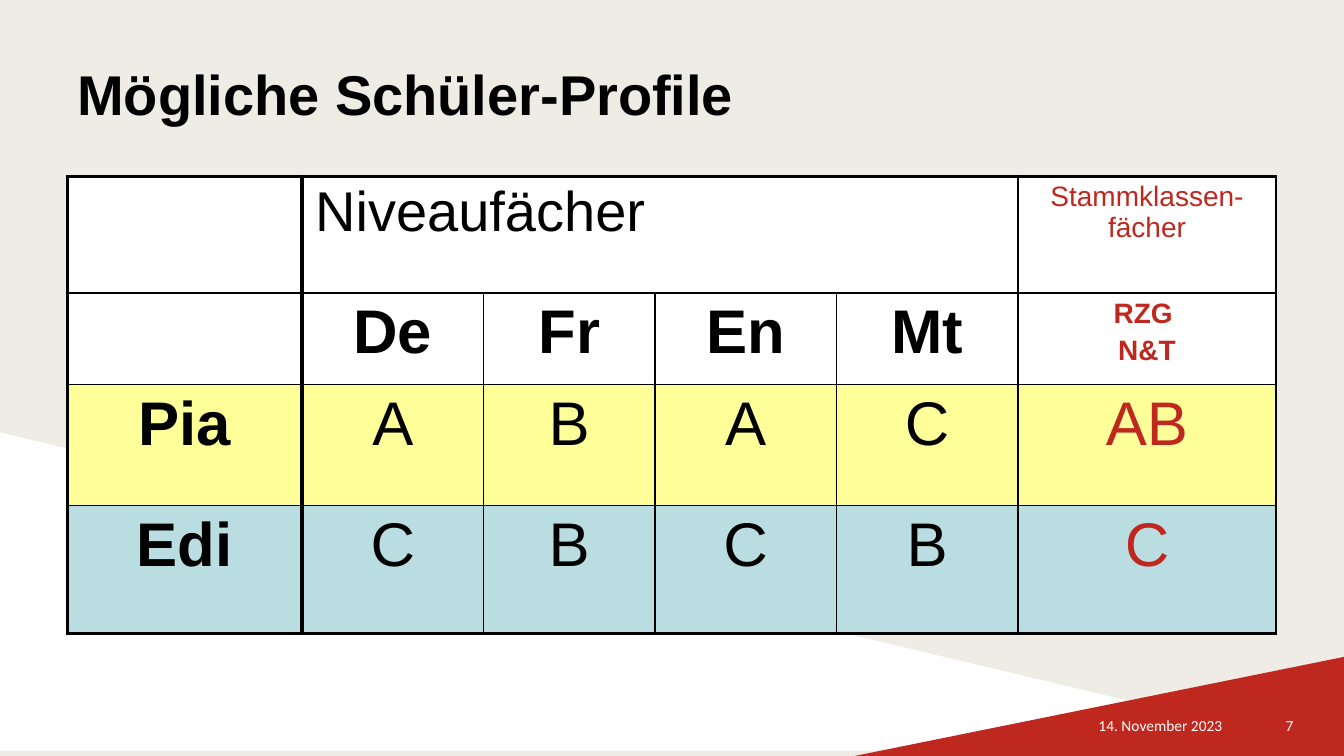
from pptx import Presentation
from pptx.dml.color import RGBColor
from pptx.enum.shapes import MSO_SHAPE
from pptx.enum.text import MSO_ANCHOR, PP_ALIGN
from pptx.oxml.ns import qn
from pptx.util import Inches, Pt
from lxml import etree

TRIANGLE = MSO_SHAPE.RIGHT_TRIANGLE
MIDDLE = MSO_ANCHOR.MIDDLE
LEFT, CENTER, RIGHT = PP_ALIGN.LEFT, PP_ALIGN.CENTER, PP_ALIGN.RIGHT

THEME = {
    "background": "EFEBE5", "white": "FFFFFF", "red": "BE281E",
    "black": "000000", "yellow": "FFFF99", "blue": "BADDE1",
    "font": "Arial", "footer font": "Calibri",
    "title": 40, "grade": 44, "note": 20, "footer": 11,
}

presentation = Presentation()
presentation.slide_width = Inches(13.33)
presentation.slide_height = Inches(7.5)
slide = presentation.slides.add_slide(presentation.slide_layouts[5])
slide.background.fill.solid()
slide.background.fill.fore_color.rgb = RGBColor.from_string(THEME["background"])


def place(left, top, width, height):
    """Turn shares of the slide's size into lengths."""
    across, down = presentation.slide_width, presentation.slide_height
    return [int(left * across), int(top * down), int(width * across), int(height * down)]


def write(paragraph, text, size, color, bold=False, align=CENTER, font=THEME["font"]):
    paragraph.alignment = align
    run = paragraph.add_run()
    run.text = text
    run.font.name = font
    run.font.size = Pt(THEME[size])
    run.font.bold = bold
    run.font.color.rgb = RGBColor.from_string(THEME[color])


# Background wedges
for area, color, flipped in [
    ((0, 0.572, 0.996, 0.421), "white", False),
    ((0.636, 0.869, 0.364, 0.131), "red", True),
]:
    wedge = slide.shapes.add_shape(TRIANGLE, *place(*area))
    wedge.shadow.inherit = False
    wedge.fill.solid()
    wedge.fill.fore_color.rgb = RGBColor.from_string(THEME[color])
    wedge.line.fill.background()
    if flipped:
        wedge.element.spPr.find(qn("a:xfrm")).set("flipH", "1")

# Date and slide number
for text, left, width, align in [
    ("14. November 2023", 0.648, 0.269, RIGHT),
    ("7", 0.933, 0.053, CENTER),
]:
    box = slide.shapes.add_textbox(*place(left, 0.933, width, 0.053))
    box.text_frame.word_wrap = True
    box.text_frame.vertical_anchor = MIDDLE
    write(box.text_frame.paragraphs[0], text, "footer", "white",
          align=align, font=THEME["footer font"])

# Title
title = slide.shapes.title
title.left, title.top, title.width, title.height = place(0.05, 0.04, 0.9, 0.167)
title.text_frame.vertical_anchor = MIDDLE
write(title.text_frame.paragraphs[0], "Mögliche Schüler-Profile", "title", "black",
      bold=True, align=LEFT)

# Profile table
column_widths = [2.33, 1.8, 1.7, 1.8, 1.8, 2.56]
row_heights = [1.16, 0.91, 1.2, 1.27]
row_fills = ["white", "white", "yellow", "blue"]
vertical_rules = [2.25, 3, 1, 1, 1, 2.25, 2.25]
horizontal_rules = [2.25, 1, 1, 1, 2.25]
profiles = [
    ["", "Niveaufächer", "", "", "", "Stammklassen-fächer"],
    ["", "De", "Fr", "En", "Mt", "RZG \nN&T"],
    ["Pia", "A", "B", "A", "C", "AB"],
    ["Edi", "C", "B", "C", "B", "C"],
]
last_column = len(column_widths) - 1
table = slide.shapes.add_table(
    len(row_heights), len(column_widths), *place(0.05, 0.233, 0.9, 0.605)).table
table.first_row = False
table.horz_banding = False
for column, width in zip(table.columns, column_widths):
    column.width = Inches(width)
for row, height in zip(table.rows, row_heights):
    row.height = Inches(height)
table.cell(0, 1).merge(table.cell(0, last_column - 1))

for r, row_texts in enumerate(profiles):
    for c, text in enumerate(row_texts):
        cell = table.cell(r, c)
        cell.margin_left = cell.margin_right = Inches(0.13)
        cell.margin_top = cell.margin_bottom = Inches(0.05)

        # Cell borders, with no inner rules in the merged heading
        merged = cell.is_merge_origin or cell.is_spanned
        first, end = (1, last_column) if merged else (c, c + 1)
        properties = cell._tc.get_or_add_tcPr()
        for side, points in [
            ("L", vertical_rules[first]), ("R", vertical_rules[end]),
            ("T", horizontal_rules[r]), ("B", horizontal_rules[r + 1]),
        ]:
            border = etree.SubElement(properties, qn("a:ln" + side), w=str(Pt(points)))
            solid = etree.SubElement(border, qn("a:solidFill"))
            etree.SubElement(solid, qn("a:srgbClr"), val=THEME["black"])
        cell.fill.solid()
        cell.fill.fore_color.rgb = RGBColor.from_string(THEME[row_fills[r]])

        # Cell text
        if not text:
            continue
        color = "red" if c == last_column else "black"
        if r < 2 and c == last_column:
            size = "note"
        else:
            size = "title" if r == 0 else "grade"
        bold = r == 1 or c == 0
        align = LEFT if cell.is_merge_origin else CENTER
        for index, line in enumerate(text.split("\n")):
            paragraph = cell.text_frame.paragraphs[0]
            if index:
                paragraph = cell.text_frame.add_paragraph()
                paragraph.space_before = Pt(4)
            write(paragraph, line, size, color, bold, align)

presentation.save("out.pptx")
